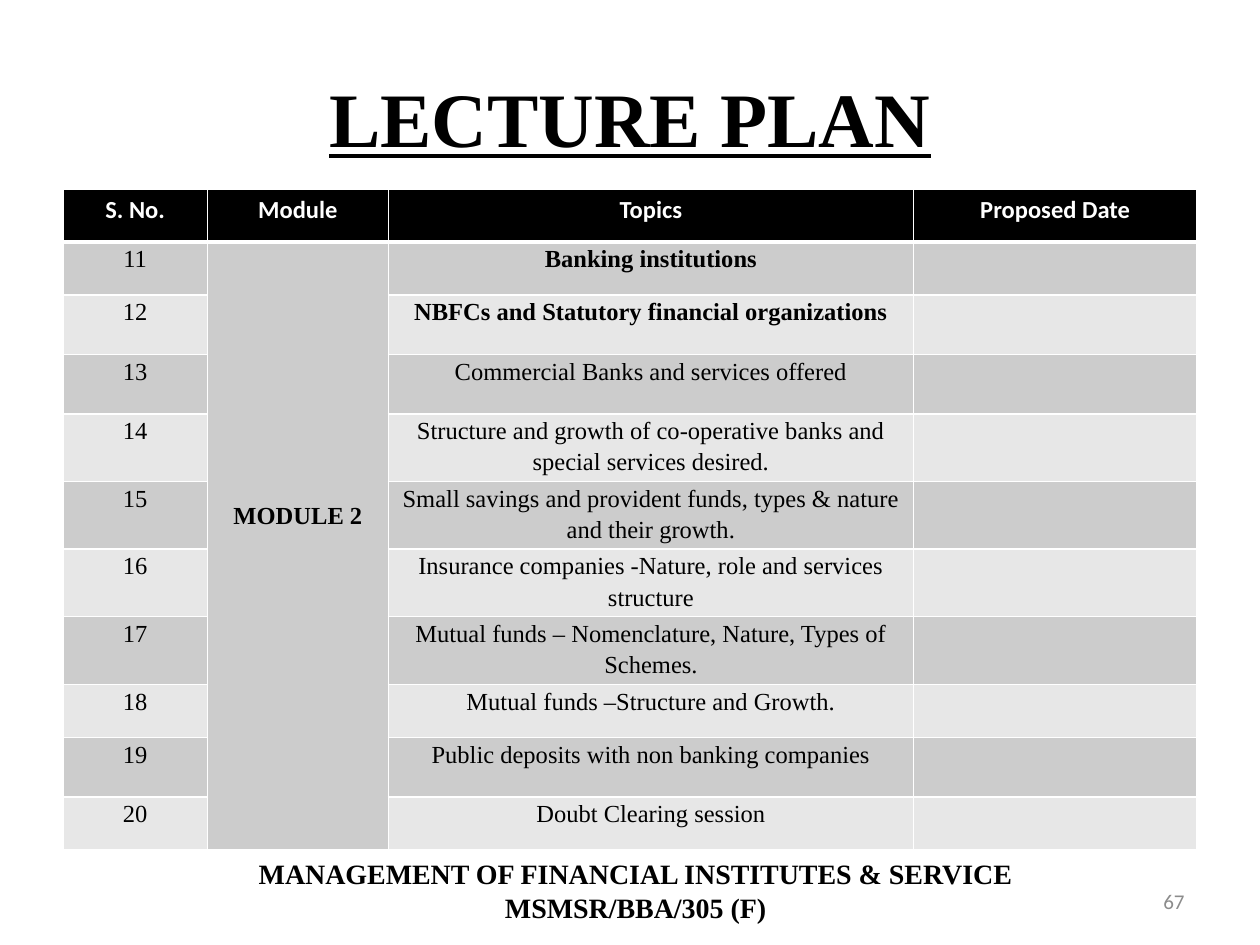
"""Build a lecture plan slide with a table of topics for one module."""
import lxml.etree
import pptx
import pptx.dml.color
import pptx.enum.text
import pptx.oxml.ns
import pptx.util

Pt = pptx.util.Pt
RGBColor = pptx.dml.color.RGBColor
ALIGN = pptx.enum.text.PP_ALIGN
ANCHOR = pptx.enum.text.MSO_ANCHOR

BLACK = RGBColor(0x00, 0x00, 0x00)
WHITE = RGBColor(0xFF, 0xFF, 0xFF)
GREY = RGBColor(0x8C, 0x8C, 0x8C)
BANDS = [RGBColor(0xCC, 0xCC, 0xCC), RGBColor(0xE7, 0xE7, 0xE7)]
SERIF, SANS = "Times New Roman", "Calibri"

TITLE = "LECTURE PLAN"
HEADERS = ["S. No.", "Module", "Topics", "Proposed Date"]
MODULE = "MODULE 2"
FIRST_NO = 11
TOPICS = [
    ("Banking institutions", True),
    ("NBFCs and Statutory financial organizations", True),
    ("Commercial Banks and services offered", False),
    ("Structure and growth of co-operative banks and special services desired.", False),
    ("Small savings and provident funds, types & nature and their growth.", False),
    ("Insurance companies -Nature, role and services structure", False),
    ("Mutual funds – Nomenclature, Nature, Types of Schemes.", False),
    ("Mutual funds –Structure and Growth.", False),
    ("Public deposits with non banking companies", False),
    ("Doubt Clearing session", False),
]
FOOTER = "MANAGEMENT OF FINANCIAL INSTITUTES & SERVICE\nMSMSR/BBA/305 (F)"
PAGE = "67"

COL_WIDTHS = [82.5, 103.5, 300, 162]
LOW, HIGH = 30.3, 34
LOW_ROWS = {0, 1, 8, 10}


def write(tf, text, font=SERIF, size=14, color=BLACK, bold=False,
          underline=False, align=ALIGN.CENTER, spacing=None):
    p = tf.paragraphs[0]
    p.text = text
    p.alignment = align
    if spacing:
        p.line_spacing = spacing
    for r in p.runs:
        r.font.name, r.font.size = font, Pt(size)
        r.font.bold, r.font.underline = bold, underline
        r.font.color.rgb = color


def add_text(s, box, text, anchor=ANCHOR.MIDDLE, **fmt):
    tf = s.shapes.add_textbox(*map(Pt, box)).text_frame
    tf.word_wrap = True
    tf.vertical_anchor = anchor
    write(tf, text, **fmt)


def style_cell(cell, fill, bottom=1):
    tcPr = cell._tc.get_or_add_tcPr()
    for side, width in (("L", 1), ("R", 1), ("T", 1), ("B", bottom)):
        ln = lxml.etree.SubElement(tcPr, pptx.oxml.ns.qn(f"a:ln{side}"), w=str(Pt(width)))
        solid = lxml.etree.SubElement(ln, pptx.oxml.ns.qn("a:solidFill"))
        lxml.etree.SubElement(solid, pptx.oxml.ns.qn("a:srgbClr"), val=str(WHITE))
    cell.fill.solid()
    cell.fill.fore_color.rgb = fill


def write_body(cell, text, bold=False):
    cell.margin_left = cell.margin_right = Pt(5)
    cell.margin_top = cell.margin_bottom = 0
    write(cell.text_frame, text, bold=bold, spacing=1.15)


def add_plan(s):
    heights = [LOW if i in LOW_ROWS else HIGH for i in range(len(TOPICS) + 1)]
    table = s.shapes.add_table(len(heights), len(COL_WIDTHS), Pt(36), Pt(108),
                               Pt(sum(COL_WIDTHS)), Pt(sum(heights))).table
    for col, width in zip(table.columns, COL_WIDTHS):
        col.width = Pt(width)
    for row, height in zip(table.rows, heights):
        row.height = Pt(height)

    for c, text in enumerate(HEADERS):
        style_cell(table.cell(0, c), BLACK, bottom=3)
        write(table.cell(0, c).text_frame, text, font=SANS, color=WHITE, bold=True)
    for i, (topic, bold) in enumerate(TOPICS):
        for c in range(len(HEADERS)):
            style_cell(table.cell(i + 1, c), BANDS[0 if c == 1 else i % 2])
        write_body(table.cell(i + 1, 0), str(FIRST_NO + i))
        write_body(table.cell(i + 1, 2), topic, bold)

    module = table.cell(1, 1)
    module.merge(table.cell(len(TOPICS), 1))
    write_body(module, MODULE, True)
    module.vertical_anchor = ANCHOR.MIDDLE
    module.margin_bottom = Pt(36)


def main():
    prs = pptx.Presentation()
    prs.slide_width, prs.slide_height = Pt(720), Pt(540)
    s = prs.slides.add_slide(prs.slide_layouts[6])
    add_text(s, (36, 21.6, 648, 90), TITLE, size=44, bold=True, underline=True)
    add_plan(s)
    add_text(s, (60.5, 486, 605.5, 46), FOOTER, anchor=ANCHOR.TOP, size=16, bold=True)
    add_text(s, (516, 500.5, 168, 28.8), PAGE, font=SANS, size=12, color=GREY,
             align=ALIGN.RIGHT)
    prs.save("out.pptx")


if __name__ == "__main__":
    main()
